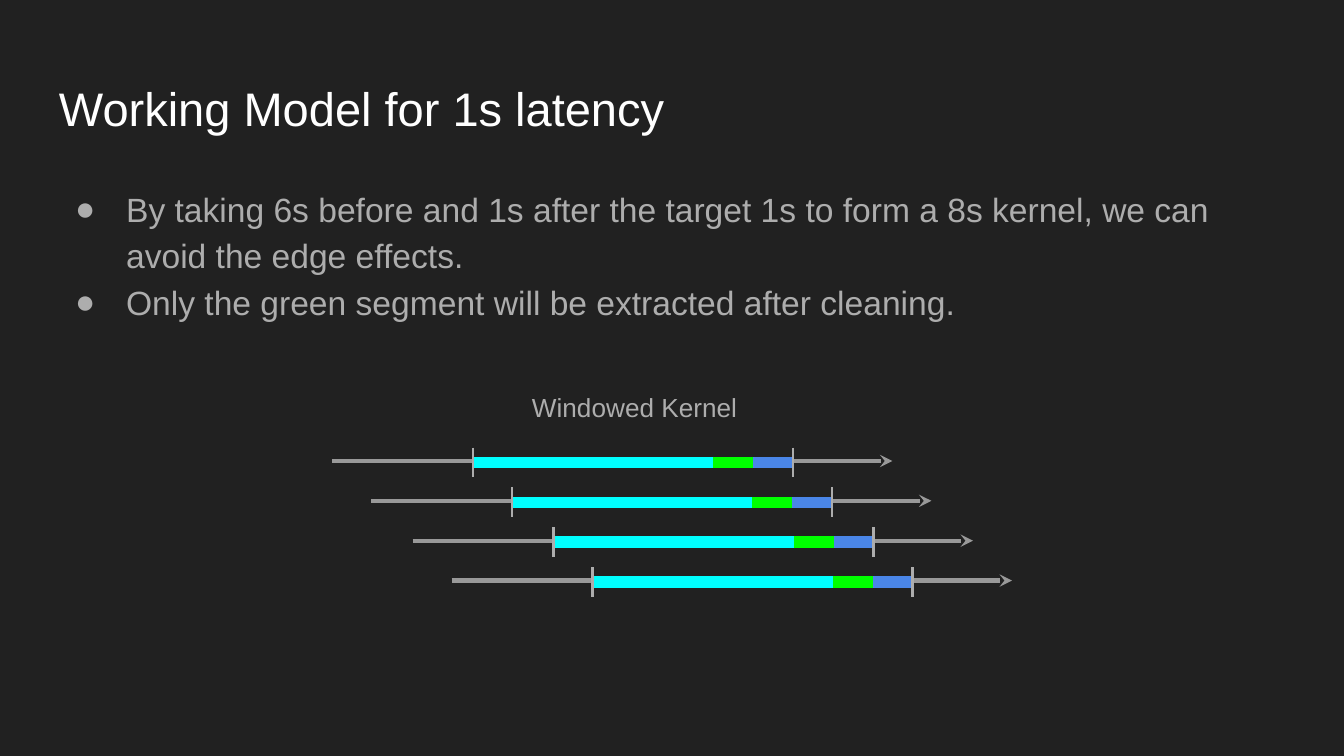
from dataclasses import dataclass

from lxml.etree import SubElement
from pptx import Presentation
from pptx.dml.color import RGBColor
from pptx.enum.shapes import MSO_CONNECTOR
from pptx.enum.text import MSO_AUTO_SIZE
from pptx.oxml.ns import qn
from pptx.util import Inches, Pt


@dataclass(frozen=True)
class Theme:
    font: str = "Arial"
    background: str = "212121"
    title: str = "FFFFFF"
    text: str = "ADADAD"
    timeline: str = "999999"
    before: str = "00FFFF"
    target: str = "00FF00"
    after: str = "4A86E8"
    title_size: float = 25.2
    body_size: float = 18
    label_size: float = 14


class SlideBuilder:
    def __init__(self, slide, theme):
        self.slide = slide
        self.theme = theme
        self.shapes = slide.shapes
        fill = slide.background.fill
        fill.solid()
        fill.fore_color.rgb = RGBColor.from_string(theme.background)

    def start_group(self):
        """Put all elements that follow into one group."""
        self.shapes = self.slide.shapes.add_group_shape().shapes

    def text(self, left, top, width, height, lines, size, color, bullets=False):
        box = self.shapes.add_textbox(
            Inches(left), Inches(top), Inches(width), Inches(height))
        frame = box.text_frame
        frame.word_wrap = True
        frame.margin_left = frame.margin_right = Inches(0.1)
        frame.margin_top = frame.margin_bottom = Inches(0.1)
        frame.text = "\n".join(lines)
        for paragraph in frame.paragraphs:
            if bullets:
                self.bullet(paragraph, color)
            paragraph.font.name = self.theme.font
            paragraph.font.size = Pt(size)
            paragraph.font.color.rgb = RGBColor.from_string(color)
        return frame

    def bullet(self, paragraph, color):
        properties = paragraph._p.get_or_add_pPr()
        properties.set("marL", str(Inches(0.5)))
        properties.set("indent", str(Inches(-0.38)))
        bullet_color = SubElement(properties, qn("a:buClr"))
        SubElement(bullet_color, qn("a:srgbClr"), val=color)
        SubElement(properties, qn("a:buFont"), typeface=self.theme.font)
        SubElement(properties, qn("a:buChar"), char="●")
        paragraph.line_spacing = 1.15

    def line(self, start, end, color, width, arrow=False):
        connector = self.shapes.add_connector(
            MSO_CONNECTOR.STRAIGHT, *map(Inches, start + end))
        connector.line.color.rgb = RGBColor.from_string(color)
        connector.line.width = Pt(width)
        if arrow:
            SubElement(connector.line._get_or_add_ln(), qn("a:tailEnd"), type="stealth")
        SubElement(connector._element.spPr, qn("a:effectLst"))

    def windowed_timeline(self, left, y):
        """Draw an arrow carrying an 8s kernel of one-second segments."""
        theme = self.theme
        kernel_left, kernel_width = left + 1.05, 2.38
        colors = [theme.before] * 6 + [theme.target, theme.after]
        second = kernel_width / len(colors)
        self.line((left, y), (left + 4.17, y), theme.timeline, 2.25, arrow=True)
        bar_y = y + 0.01
        for index, color in enumerate(colors):
            x = kernel_left + index * second
            self.line((x, bar_y), (x + second, bar_y), color, 6)
        for x in (kernel_left, kernel_left + kernel_width):
            self.line((x, y - 0.1), (x, y + 0.12), theme.text, 1.5)


def main():
    presentation = Presentation()
    presentation.slide_width = Inches(10)
    presentation.slide_height = Inches(10 * 9 / 16)
    slide = presentation.slides.add_slide(presentation.slide_layouts[6])
    theme = Theme()
    builder = SlideBuilder(slide, theme)

    builder.text(0.34, 1.26, 9.32, 3.74, [
        "By taking 6s before and 1s after the target 1s to form a 8s kernel, "
        "we can avoid the edge effects.",
        "Only the green segment will be extracted after cleaning.",
    ], theme.body_size, theme.text, bullets=True)
    builder.text(0.34, 0.49, 9.32, 0.63, ["Working Model for 1s latency"],
                 theme.title_size, theme.title)

    builder.start_group()
    label = builder.text(3.86, 2.81, 1.77, 0.44, ["Windowed Kernel"],
                         theme.label_size, theme.text)
    label.auto_size = MSO_AUTO_SIZE.SHAPE_TO_FIT_TEXT
    row_gap = 0.89 / 3
    for row, left in enumerate((2.47, 2.76, 3.07, 3.36)):
        builder.windowed_timeline(left, 3.43 + row * row_gap)

    presentation.save("out.pptx")


if __name__ == "__main__":
    main()
